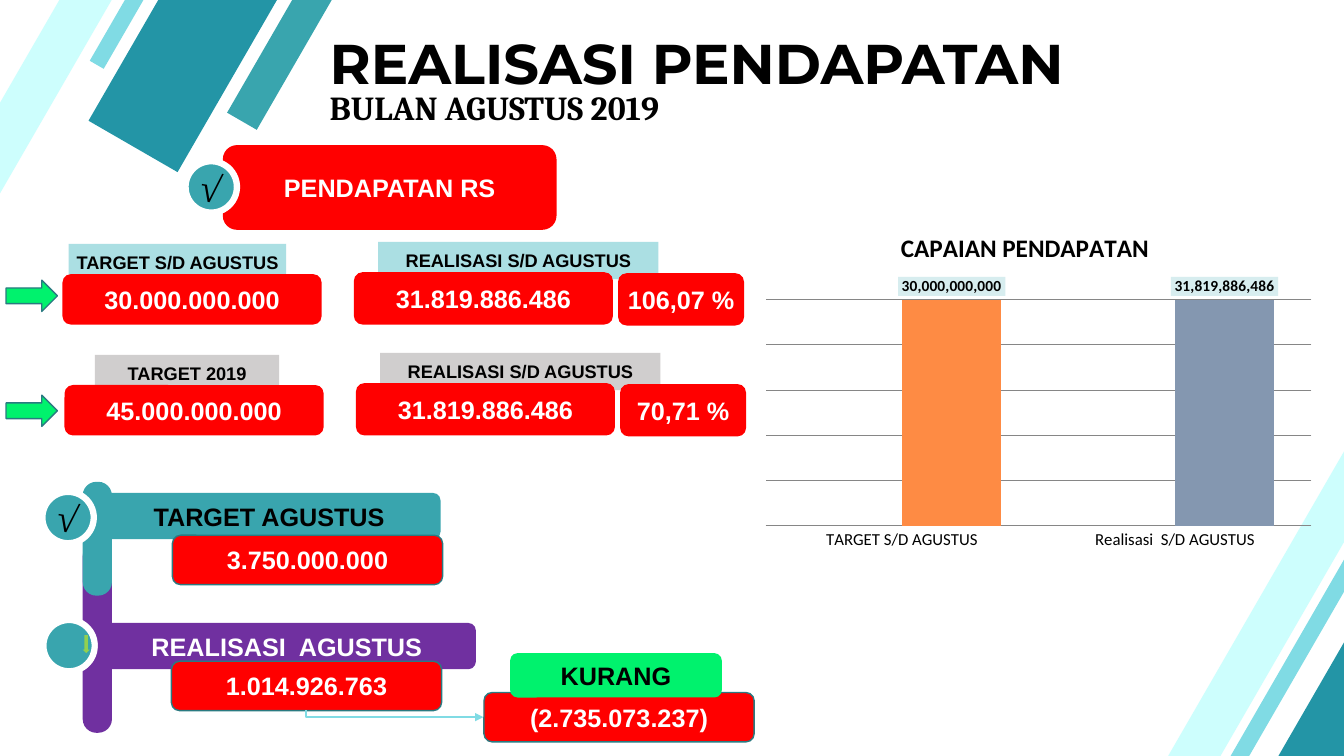
from lxml.etree import SubElement
from pptx import Presentation
from pptx.chart.data import CategoryChartData
from pptx.dml.color import RGBColor
from pptx.enum.chart import XL_CHART_TYPE, XL_LABEL_POSITION, XL_TICK_LABEL_POSITION, XL_TICK_MARK
from pptx.enum.shapes import MSO_CONNECTOR, MSO_SHAPE
from pptx.enum.text import MSO_ANCHOR, PP_ALIGN
from pptx.oxml import parse_xml
from pptx.oxml.ns import nsdecls, qn
from pptx.util import Inches, Pt

COLUMN = ROW = Inches(1)
COLUMNS, ROWS = 13.33, 7.5
COLORS = {
    "teal": "39A5AE", "deep": "2395A6", "aqua": "80DBE4", "ice": "CDFEFD",
    "edge": "2A7A81", "red": "FF0000", "purple": "7030A0", "green": "00F26D",
    "lime": "92D050", "mist": "ABDFE3", "silver": "D0CECE", "grid": "868686",
    "orange": "FE8B44", "slate": "8497B0", "label": "D7EDEF",
    "white": "FFFFFF", "black": "000000",
}


def color(name):
    return RGBColor.from_string(COLORS[name])


def cells(left, top, width, height):
    return (round(left * COLUMN), round(top * ROW),
            round(width * COLUMN), round(height * ROW))


def style(font, size, ink="black", bold=True, face="Arial"):
    font.name = face
    font.size = Pt(size)
    font.bold = bold
    font.color.rgb = color(ink)


def write(holder, words, size, ink, face="Arial", align=PP_ALIGN.CENTER):
    frame = holder.text_frame
    frame.word_wrap = True
    frame.vertical_anchor = MSO_ANCHOR.MIDDLE
    frame.margin_left = frame.margin_right = Inches(0.07)
    frame.margin_top = frame.margin_bottom = Inches(0.03)
    paragraph = frame.paragraphs[0]
    paragraph.alignment = align
    run = paragraph.add_run()
    run.text = words
    style(run.font, size, ink, face=face)
    return paragraph


def block(slide, kind, place, fill, edge=None, weight=1, turn=0):
    item = slide.shapes.add_shape(kind, *cells(*place))
    item.shadow.inherit = False
    item.rotation = turn
    item.fill.solid()
    item.fill.fore_color.rgb = color(fill)
    if edge:
        item.line.color.rgb = color(edge)
        item.line.width = Pt(weight)
    else:
        item.line.fill.background()
    return item


def stripe(slide, left, top, height, fill):
    block(slide, MSO_SHAPE.RECTANGLE, (left, top, 13.4, height), fill, turn=300)


def card(slide, place, words, fill="red", ink="white", edge=None):
    write(block(slide, MSO_SHAPE.ROUNDED_RECTANGLE, place, fill, edge), words, 18, ink)


def tag(slide, place, words, fill):
    write(block(slide, MSO_SHAPE.RECTANGLE, place, fill), words, 13, "black")


def badge(slide, left, top, turn, mark=None):
    circle = block(slide, MSO_SHAPE.OVAL, (left, top, 0.51, 0.51), "teal", "white", 4.5, turn)
    if mark:
        write(circle, mark, 27, "black", "Times New Roman")


def rail(slide, top, height, fill):
    bar = block(slide, MSO_SHAPE.ROUNDED_RECTANGLE, (0.82, top, 0.29, height), fill)
    bar.adjustments[0] = 0.47


def heading(slide, place, words, size, face):
    box = slide.shapes.add_textbox(*cells(*place))
    return write(box, words, size, "black", face, PP_ALIGN.LEFT)


def indicator(slide, left, top, arrow_top, target_place, target, target_value,
              actual_value, share, fill):
    tag(slide, target_place, target, fill)
    tag(slide, (left + 3.13, top, 2.78, 0.37), "REALISASI S/D AGUSTUS", fill)
    card(slide, (left, top + 0.32, 2.57, 0.5), target_value)
    card(slide, (left + 2.89, top + 0.3, 2.57, 0.52), actual_value)
    card(slide, (left + 5.51, top + 0.31, 1.25, 0.52), share)
    block(slide, MSO_SHAPE.RIGHT_ARROW, (0.06, arrow_top, 0.51, 0.31), "green", "edge")


def elbow(slide):
    left, top, width, height = cells(3.88, 6.2, 0.07, 1.76)
    link = slide.shapes.add_connector(MSO_CONNECTOR.ELBOW, left, top, left + width, top + height)
    link.line.color.rgb = color("aqua")
    link.line.width = Pt(1)
    properties = link._element.spPr
    properties.xfrm.set("rot", "16200000")
    properties.xfrm.set("flipH", "1")
    properties.find(qn("a:prstGeom")).set("prst", "bentConnector2")
    SubElement(properties.find(qn("a:ln")), qn("a:tailEnd"), type="triangle")
    SubElement(properties, qn("a:effectLst"))


def layout(parent, position, **shares):
    old = parent.find(qn("c:layout"))
    parts = "".join(f'<c:{key} val="{value}"/>' for key, value in shares.items())
    target = '<c:layoutTarget val="inner"/>' if "w" in shares else ""
    new = parse_xml(f'<c:layout {nsdecls("c")}><c:manualLayout>{target}'
                    '<c:xMode val="edge"/><c:yMode val="edge"/>'
                    f'{parts}</c:manualLayout></c:layout>')
    if old is not None:
        parent.remove(old)
    parent.insert(position, new)


def income_chart(slide):
    data = CategoryChartData()
    data.categories = ["TARGET S/D AGUSTUS", "Realisasi  S/D AGUSTUS"]
    data.add_series("Series 1", (None, None))
    data.add_series("Series 2", (30000000000, 31819886486))
    chart = slide.shapes.add_chart(
        XL_CHART_TYPE.COLUMN_CLUSTERED, *cells(7.48, 2.03, 5.64, 3.5), data).chart
    style(chart.font, 10.5, bold=False, face="Calibri")
    chart.has_legend = False
    chart.has_title = True
    caption = chart.chart_title.text_frame.paragraphs[0].add_run()
    caption.text = "CAPAIAN PENDAPATAN"
    style(caption.font, 18, face="Calibri")
    layout(chart.chart_title._element, 1, x=0.25, y=0.06)
    layout(chart._chartSpace.chart.plotArea, 0, x=0.02, y=0.27, w=0.96, h=0.64)

    names, amounts = chart.category_axis, chart.value_axis
    names.major_tick_mark = XL_TICK_MARK.NONE
    style(names.tick_labels.font, 12, bold=False, face="Calibri")
    amounts.minimum_scale, amounts.maximum_scale = 0, 25000000000
    amounts.major_unit = 5000000000
    amounts.major_tick_mark = XL_TICK_MARK.NONE
    amounts.tick_label_position = XL_TICK_LABEL_POSITION.NONE
    amounts.visible = False
    for line in (names.format.line, amounts.major_gridlines.format.line):
        line.color.rgb = color("grid")
        line.width = Pt(0.75)

    plot = chart.plots[0]
    plot.gap_width, plot.overlap = 75, 0
    plot.vary_by_categories = False
    for series, fill in zip(plot.series, ("teal", "deep")):
        series.format.fill.solid()
        series.format.fill.fore_color.rgb = color(fill)
    income = plot.series[1]
    for index, fill in enumerate(("orange", "slate")):
        bar = income.points[index].format.fill
        bar.solid()
        bar.fore_color.rgb = color(fill)
    labels = income.data_labels
    labels.show_value = True
    labels.position = XL_LABEL_POSITION.OUTSIDE_END
    labels.number_format = '_(* #,##0_);_(* \\(#,##0\\);_(* "-"??_);_('
    labels.number_format_is_linked = False
    style(labels.font, 11, face="Calibri")
    labels._element.find(qn("c:txPr")).addprevious(parse_xml(
        f'<c:spPr {nsdecls("c", "a")}><a:solidFill><a:srgbClr val="{COLORS["label"]}"/>'
        '</a:solidFill></c:spPr>'))


def main():
    deck = Presentation()
    deck.slide_width, deck.slide_height = round(COLUMNS * COLUMN), round(ROWS * ROW)
    slide = deck.slides.add_slide(deck.slide_layouts[6])
    for band in ((-0.95, -4.77, 0.34, "teal"), (-2.03, -4.86, 1.02, "deep"),
                 (-2.39, -5.24, 0.16, "aqua"), (-3.88, -3.64, 0.45, "ice"),
                 (9.12, 2.57, 1.02, "deep"), (8.6, 2.22, 0.16, "aqua"),
                 (7.14, 3.82, 0.45, "ice")):
        stripe(slide, *band)
    heading(slide, (3.2, 0.3, 9.98, 0.72), "REALISASI PENDAPATAN", 40, "Montserrat").line_spacing = 0.9
    heading(slide, (3.2, 0.97, 9.98, 0.31), "BULAN AGUSTUS 2019", 24, "Cambria").line_spacing = Pt(20)

    card(slide, (2.21, 1.44, 3.31, 0.84), "PENDAPATAN RS")
    badge(slide, 1.84, 1.6, 9.9, "√")
    indicator(slide, 0.62, 2.4, 2.78, (0.68, 2.42, 2.16, 0.37), "TARGET S/D AGUSTUS",
              "30.000.000.000", "31.819.886.486", "106,07 %", "mist")
    indicator(slide, 0.64, 3.5, 3.92, (0.94, 3.52, 1.83, 0.37), "TARGET 2019",
              "45.000.000.000", "31.819.886.486", "70,71 %", "silver")

    rail(slide, 5.38, 1.89, "purple")
    rail(slide, 4.78, 1.13, "teal")
    badge(slide, 0.42, 4.88, 9.9, "√")
    badge(slide, 0.43, 6.15, 82.3)
    card(slide, (0.97, 4.89, 3.4, 0.46), "TARGET AGUSTUS", "teal", "black")
    card(slide, (1.71, 5.31, 2.68, 0.49), "3.750.000.000", edge="edge")
    card(slide, (0.97, 6.18, 3.75, 0.46), "REALISASI  AGUSTUS", "purple")
    card(slide, (1.7, 6.56, 2.68, 0.49), "1.014.926.763", edge="edge")
    block(slide, MSO_SHAPE.DOWN_ARROW, (0.82, 6.3, 0.07, 0.18), "lime")
    card(slide, (4.8, 6.87, 2.68, 0.49), "(2.735.073.237)", edge="edge")
    elbow(slide)
    card(slide, (5.06, 6.48, 2.1, 0.44), "KURANG", "green", "black")
    income_chart(slide)
    deck.save("out.pptx")


if __name__ == "__main__":
    main()
